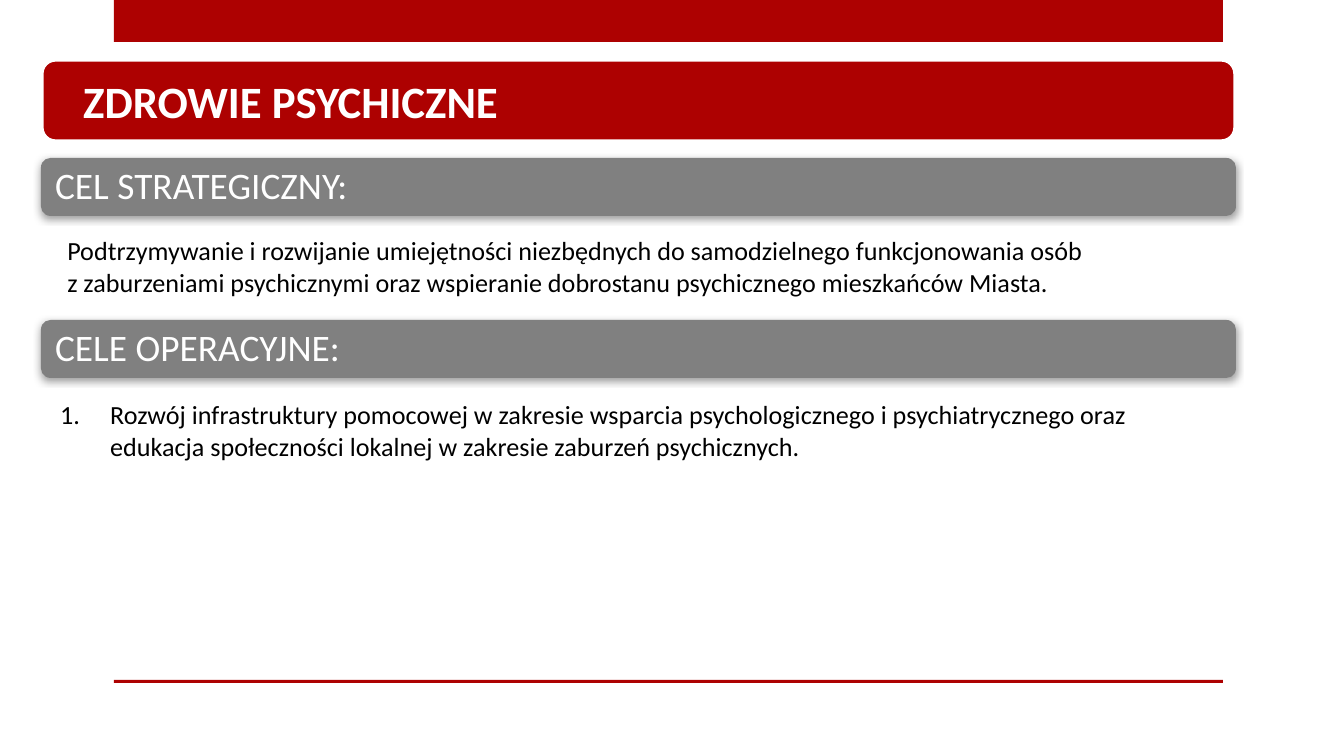
from lxml.etree import SubElement
from pptx import Presentation
from pptx.dml.color import RGBColor
from pptx.enum.shapes import MSO_SHAPE
from pptx.enum.text import MSO_ANCHOR
from pptx.oxml.ns import qn
from pptx.util import Emu, Pt

RED, GRAY, WHITE, BLACK = "AD0101", "808080", "FFFFFF", "000000"
FONT = "Calibri"

TITLE = "ZDROWIE PSYCHICZNE"
SECTIONS = [
    {
        "heading": "CEL STRATEGICZNY:",
        "top": 158,
        "body": "Podtrzymywanie i rozwijanie umiejętności niezbędnych do samodzielnego funkcjonowania osób\n"
                "z zaburzeniami psychicznymi oraz wspieranie dobrostanu psychicznego mieszkańców Miasta.",
        "body_box": (54, 228, 1152, 77),
        "numbered": False,
    },
    {
        "heading": "CELE OPERACYJNE:",
        "top": 320,
        "body": "Rozwój infrastruktury pomocowej w zakresie wsparcia psychologicznego i psychiatrycznego oraz "
                "edukacja społeczności lokalnej w zakresie zaburzeń psychicznych.",
        "body_box": (47, 392, 1171, 77),
        "numbered": True,
    },
]
FRAME_BARS = [(114, 0, 1109, 42), (114, 680, 1109, 3)]
BAR_LEFT, BAR_WIDTH, BAR_HEIGHT = 41, 1195, 58
HEADING_INSET = 3


def px(value):
    return Emu(round(value * 914400 / 134.4))


def color(value):
    return RGBColor.from_string(value)


def add_bar(slide, kind, box, fill, line=None):
    shape = slide.shapes.add_shape(kind, *map(px, box))
    shape.shadow.inherit = False
    shape.fill.solid()
    shape.fill.fore_color.rgb = color(fill)
    if line:
        shape.line.color.rgb = color(line)
        shape.line.width = Pt(1.75)
    else:
        shape.line.fill.background()
    return shape


def add_shadow(shape):
    effects = shape.element.spPr.find(qn("a:effectLst"))
    shadow = SubElement(effects, qn("a:outerShdw"), blurRad=str(Pt(4)), dist=str(Pt(1)),
                        dir=str(88 * 60000), rotWithShape="0")
    shade = SubElement(shadow, qn("a:srgbClr"), val=BLACK)
    SubElement(shade, qn("a:alpha"), val="40000")


def add_text(slide, text, box, size=14, fill=BLACK, bold=False, wrap=True,
             anchor=MSO_ANCHOR.TOP, inset=None, spacing=None, numbered=False):
    frame = slide.shapes.add_textbox(*map(px, box)).text_frame
    frame.word_wrap = wrap
    frame.vertical_anchor = anchor
    if inset is not None:
        frame.margin_left = frame.margin_right = px(inset)
        frame.margin_top = frame.margin_bottom = px(inset)
    paragraph = frame.paragraphs[0]
    paragraph.text = text
    if spacing:
        paragraph.line_spacing = spacing
    for run in paragraph.runs:
        run.font.name = FONT
        run.font.size = Pt(size)
        run.font.bold = bold
        run.font.color.rgb = color(fill)
    if numbered:
        properties = paragraph._p.get_or_add_pPr()
        indent = px(50)
        properties.set("marL", str(indent))
        properties.set("indent", str(-indent))
        bullet_color = SubElement(properties, qn("a:buClr"))
        SubElement(bullet_color, qn("a:srgbClr"), val=fill)
        SubElement(properties, qn("a:buFont"), typeface="+mj-lt")
        SubElement(properties, qn("a:buAutoNum"), type="arabicPeriod")


def main():
    presentation = Presentation()
    presentation.slide_width, presentation.slide_height = px(1344), px(756)
    slide = presentation.slides.add_slide(presentation.slide_layouts[6])

    for box in FRAME_BARS:
        add_bar(slide, MSO_SHAPE.RECTANGLE, box, RED)

    for section in SECTIONS:
        bar_box = (BAR_LEFT, section["top"], BAR_WIDTH, BAR_HEIGHT)
        add_shadow(add_bar(slide, MSO_SHAPE.ROUNDED_RECTANGLE, bar_box, GRAY))
        heading_box = (BAR_LEFT + HEADING_INSET, section["top"] + HEADING_INSET,
                       BAR_WIDTH - 2 * HEADING_INSET, BAR_HEIGHT - 2 * HEADING_INSET)
        add_text(slide, section["heading"], heading_box, size=20, fill=WHITE,
                 anchor=MSO_ANCHOR.MIDDLE, inset=11, spacing=0.9)
        add_text(slide, section["body"], section["body_box"], numbered=section["numbered"])

    add_bar(slide, MSO_SHAPE.ROUNDED_RECTANGLE, (42, 60, 1193, 81), RED, line=WHITE)
    add_text(slide, TITLE, (70, 67, 450, 67), size=24, fill=WHITE, bold=True, wrap=False)

    presentation.save("out.pptx")


if __name__ == "__main__":
    main()
